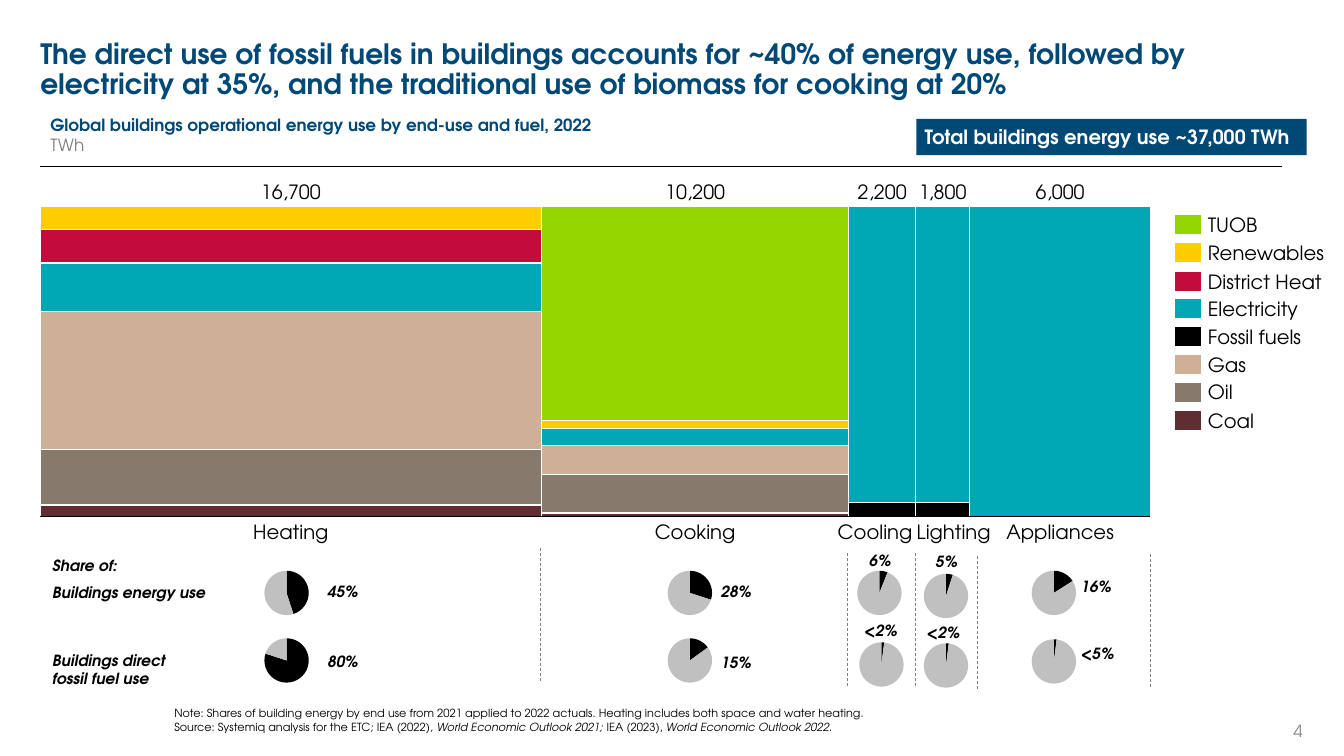
from lxml import etree
from pptx import Presentation, util as u
from pptx.chart import data as chart_data
from pptx.dml.color import RGBColor
from pptx.enum import chart as charts, dml, shapes, text
from pptx.oxml import ns

PX = 9144  # 100 px to the inch
FONT = "TeX Gyre Adventor"
NAVY = RGBColor(0x00, 0x48, 0x76)
WHITE = RGBColor(0xFF, 0xFF, 0xFF)
BLACK = RGBColor(0x00, 0x00, 0x00)
GREY = RGBColor(0x80, 0x80, 0x80)
PAGE_GREY = RGBColor(0x8C, 0x8C, 0x8C)
PIE_GREY = RGBColor(0xC0, 0xC0, 0xC0)

# Legend order, top to bottom
FUELS = {
    "TUOB": RGBColor(0x95, 0xD6, 0x00),
    "Renewables": RGBColor(0xFF, 0xCD, 0x00),
    "District Heat": RGBColor(0xC3, 0x0C, 0x3E),
    "Electricity": RGBColor(0x00, 0xA7, 0xB5),
    "Fossil fuels": BLACK,
    "Gas": RGBColor(0xCE, 0xB0, 0x97),
    "Oil": RGBColor(0x85, 0x7A, 0x6B),
    "Coal": RGBColor(0x5F, 0x2D, 0x32),
}

# End use, label shift, total, column width, fuel heights from top to bottom
END_USES = [
    ("Heating", 0, "16,700", 497, {"Renewables": 23, "District Heat": 33, "Electricity": 48,
                                   "Gas": 137, "Oil": 55, "Coal": 11}),
    ("Cooking", 0, "10,200", 305, {"TUOB": 212, "Renewables": 8, "Electricity": 17,
                                   "Gas": 29, "Oil": 38, "Coal": 3}),
    ("Cooling", -7, "2,200", 66, {"Electricity": 294, "Fossil fuels": 13}),
    ("Lighting", 11, "1,800", 54, {"Electricity": 294, "Fossil fuels": 13}),
    ("Appliances", 0, "6,000", 179, {"Electricity": 307}),
]

# Pie left, pie top, share, label, label left, label top (within the share region)
SHARES = [
    (213, 13, 45, "45%", 285, 33), (213, 80, 80, "80%", 285, 103),
    (613, 13, 30, "28%", 675, 33), (613, 80, 15, "15%", 675, 104),
    (801, 13, 6, "6%", 822, 3), (803, 84, 2, "<2%", 817, 72),
    (867, 16, 5, "5%", 888, 4), (867, 85, 2, "<2%", 879, 74),
    (974, 13, 16, "16%", 1032, 29), (974, 81, 2, "<5%", 1032, 95),
]
DIVIDERS = [(496, 0), (800, 5), (868, 5), (929, 8), (1101, 6)]


def emu(box):
    return [u.Emu(round(length * PX)) for length in box]


def write(frame, paragraphs, size=14, color=BLACK, bold=False, italic=False,
          align=text.PP_ALIGN.LEFT, anchor=text.MSO_ANCHOR.TOP, insets=(0, 0),
          wrap=True, line_spacing=None):
    """Each paragraph is a string or a list of (text, format) runs."""
    frame.word_wrap = wrap
    frame.vertical_anchor = anchor
    frame.margin_left = frame.margin_right = u.Emu(insets[0] * PX)
    frame.margin_top = frame.margin_bottom = u.Emu(insets[1] * PX)
    for index, content in enumerate(paragraphs):
        paragraph = frame.paragraphs[0] if index == 0 else frame.add_paragraph()
        paragraph.alignment = align
        if line_spacing:
            paragraph.line_spacing = line_spacing
        runs = [(content, {})] if isinstance(content, str) else content
        for words, changes in runs:
            run = paragraph.add_run()
            run.text = words
            run.font.name = FONT
            run.font.size = u.Pt(size)
            run.font.color.rgb = changes.get("color", color)
            run.font.bold = changes.get("bold", bold)
            run.font.italic = changes.get("italic", italic)


def add_text(slide, box, *paragraphs, **style):
    frame = slide.shapes.add_textbox(*emu(box)).text_frame
    write(frame, paragraphs, **style)
    return frame


def add_rectangle(slide, box, fill, outline=None):
    shape = slide.shapes.add_shape(shapes.MSO_SHAPE.RECTANGLE, *emu(box))
    shape.shadow.inherit = False
    shape.fill.solid()
    shape.fill.fore_color.rgb = fill
    if outline is None:
        shape.line.fill.background()
    else:
        shape.line.color.rgb = outline
        shape.line.width = u.Pt(0.75)
    return shape


def add_line(slide, ends, color=BLACK, width=0.5, dashed=False):
    line = slide.shapes.add_connector(shapes.MSO_CONNECTOR.STRAIGHT, *emu(ends))
    line.line.color.rgb = color
    line.line.width = u.Pt(width)
    if dashed:
        line.line.dash_style = dml.MSO_LINE.DASH
    etree.SubElement(line._element.spPr, ns.qn("a:effectLst"))


def add_pie(slide, box, share):
    values = chart_data.CategoryChartData()
    values.categories = ["1", "2"]
    values.add_series("Series 1", (share, 100 - share))
    chart = slide.shapes.add_chart(charts.XL_CHART_TYPE.PIE, *emu(box), values).chart
    chart.has_legend = chart.has_title = False
    chart.font.name = "DejaVu Sans"
    chart.font.size = u.Pt(10)
    chart.font.color.rgb = BLACK
    plot = chart.plots[0]
    plot.vary_by_categories = True
    for index, color in enumerate((BLACK, PIE_GREY)):
        point = plot.series[0].points[index].format
        point.fill.solid()
        point.fill.fore_color.rgb = color
        point.line.fill.background()
    # Fixed inner plot area
    area = chart._chartSpace.chart.plotArea
    for old in area.findall(ns.qn("c:layout")):
        area.remove(old)
    layout = etree.Element(ns.qn("c:layout"))
    manual = etree.SubElement(layout, ns.qn("c:manualLayout"))
    for tag, value in (("layoutTarget", "inner"), ("xMode", "edge"), ("yMode", "edge"),
                       ("x", "0.15"), ("y", "0.15"), ("w", "0.71"), ("h", "0.71")):
        etree.SubElement(manual, ns.qn("c:" + tag)).set("val", value)
    area.insert(0, layout)


def build_header(slide, left, top, width):
    add_text(slide, (left, top, width, 78),
             "The direct use of fossil fuels in buildings accounts for ~40% of energy use, "
             "followed by electricity at 35%, and the traditional use of biomass for cooking at 20%",
             size=20, color=NAVY, bold=True, anchor=text.MSO_ANCHOR.MIDDLE, line_spacing=0.9)
    add_text(slide, (left, top + 78, 622, 51),
             "Global buildings operational energy use by end-use and fuel, 2022",
             [("TWh", {"color": GREY, "bold": False})],
             size=12, color=NAVY, bold=True, insets=(10, 5))
    add_line(slide, (left, top + 134, left + 1232, top + 134))
    banner = add_rectangle(slide, (left + 869, top + 87, 387, 36), NAVY)
    write(banner.text_frame, ["Total buildings energy use ~37,000 TWh"], color=WHITE,
          bold=True, anchor=text.MSO_ANCHOR.MIDDLE, insets=(8, 8))


def build_mekko(slide, left, top, height):
    column = left
    label = dict(align=text.PP_ALIGN.CENTER, wrap=False, line_spacing=0.9)
    for name, shift, total, width, fuels in END_USES:
        segment = top
        for fuel, segment_height in fuels.items():
            add_rectangle(slide, (column, segment, width, segment_height), FUELS[fuel], WHITE)
            segment += segment_height
        middle = column + width / 2
        add_text(slide, (middle - 40, top - 24, 80, 21), total,
                 anchor=text.MSO_ANCHOR.BOTTOM, **label)
        add_text(slide, (middle + shift - 65, top + height + 6, 130, 21), name, **label)
        column += width
    add_line(slide, (left, top + height, column, top + height), width=0.75)


def build_legend(slide, left, top, pitch):
    for index, (fuel, color) in enumerate(FUELS.items()):
        row = top + round(index * pitch)
        add_rectangle(slide, (left, row, 27, 20), color, WHITE)
        add_text(slide, (left + 33, row + 1, 130, 21), fuel, wrap=False,
                 anchor=text.MSO_ANCHOR.MIDDLE, line_spacing=0.9)


def build_shares(slide, left, top):
    style = dict(size=11, bold=True, italic=True)
    frame = add_text(slide, (left + 12, top + 8, 215, 131), "Share of:", "Buildings energy use",
                     "Buildings direct", "fossil fuel use", **style)
    heading, energy, direct, _ = frame.paragraphs
    heading.space_after = energy.space_after = u.Pt(6)
    direct.space_before = u.Pt(29)
    for pie_x, pie_y, share, label, label_x, label_y in SHARES:
        add_pie(slide, (left + pie_x, top + pie_y, 62, 62), share)
        add_text(slide, (left + label_x, top + label_y, 49, 18), label, **style)
    for x, y in DIVIDERS:
        add_line(slide, (left + x, top + y, left + x, top + y + 132), GREY, dashed=True)


def build_footer(slide, left, top):
    add_text(slide, (left, top, 1102, 36),
             "Note: Shares of building energy by end use from 2021 applied to 2022 actuals. "
             "Heating includes both space and water heating.",
             [("Source: Systemiq analysis for the ETC; IEA (2022), ", {}),
              ("World Economic Outlook 2021;", {"italic": True}),
              (" IEA (2023), ", {}),
              ("World Economic Outlook 2022.", {"italic": True})],
             size=8, insets=(10, 5))
    add_text(slide, (left + 1074, top - 2, 55, 41), "4", size=12, color=PAGE_GREY,
             align=text.PP_ALIGN.RIGHT, anchor=text.MSO_ANCHOR.BOTTOM)


def main():
    presentation = Presentation()
    presentation.slide_width, presentation.slide_height = emu((1333, 750))
    slide = presentation.slides.add_slide(presentation.slide_layouts[6])
    build_header(slide, 40, 31, 1273)
    build_mekko(slide, 40, 205, 307)
    build_legend(slide, 1165, 213, 27.75)
    build_shares(slide, 40, 544)
    build_footer(slide, 163, 696)
    presentation.save("out.pptx")


if __name__ == "__main__":
    main()
